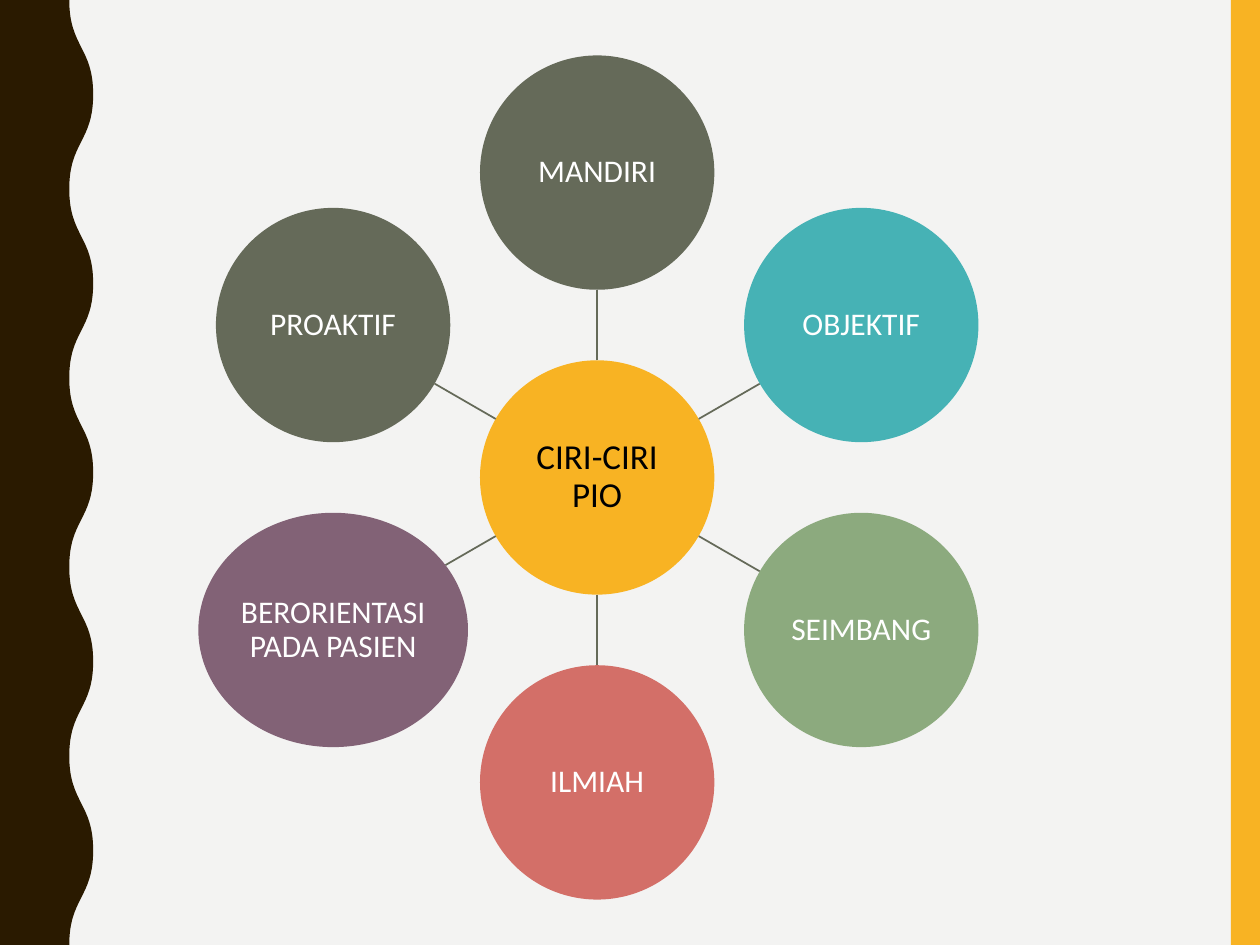
from math import cos, hypot, radians, sin

from lxml.etree import SubElement
from pptx import Presentation
from pptx.dml.color import RGBColor
from pptx.enum.shapes import MSO_CONNECTOR, MSO_SHAPE
from pptx.enum.text import MSO_ANCHOR, PP_ALIGN
from pptx.oxml.ns import qn
from pptx.util import Inches, Pt

# Content: text, fill, width; clockwise from the top
HUB = "CIRI-CIRI PIO"
NODES = [
    ("MANDIRI", "656A59", 1.86),
    ("OBJEKTIF", "46B2B5", 1.86),
    ("SEIMBANG", "8CAA7E", 1.86),
    ("ILMIAH", "D36F68", 1.86),
    ("BERORIENTASI PADA PASIEN", "826276", 2.14),
    ("PROAKTIF", "656A59", 1.86),
]
AMBER, BROWN, GREY = "F8B323", "2A1A00", "656A59"

# Layout in inches
WIDTH, HEIGHT = 10, 7.5
CX, CY, RING, DIAMETER = 4.74, 3.79, 2.42, 1.86
WAVE_EDGES, WAVE_COUNT = (0.55, 0.74), 10


def rgb(value):
    return RGBColor.from_string(value)


def paint(sp, color):
    sp.shadow.inherit = False
    sp.fill.solid()
    sp.fill.fore_color.rgb = rgb(color)
    sp.line.fill.background()


def add_circle(s, text, x, y, width, fill, size, color):
    sp = s.shapes.add_shape(
        MSO_SHAPE.OVAL, Inches(x - width / 2), Inches(y - DIAMETER / 2),
        Inches(width), Inches(DIAMETER))
    paint(sp, fill)
    tf = sp.text_frame
    tf.word_wrap = True
    tf.vertical_anchor = MSO_ANCHOR.MIDDLE
    tf.margin_left = tf.margin_right = Inches(0.01)
    tf.margin_top = tf.margin_bottom = Inches(0.01)
    p = tf.paragraphs[0]
    p.text = text
    p.alignment = PP_ALIGN.CENTER
    p.line_spacing = 0.9
    p.font.name = "Calibri"
    p.font.size = Pt(size)
    p.font.color.rgb = rgb(color)


def add_spoke(s, dx, dy, node_width):
    """Line from the hub's edge to the node's edge, along direction (dx, dy)."""
    start = DIAMETER / 2
    end = RING - 1 / hypot(dx / (node_width / 2), dy / (DIAMETER / 2))
    line = s.shapes.add_connector(
        MSO_CONNECTOR.STRAIGHT,
        Inches(CX + start * dx), Inches(CY + start * dy),
        Inches(CX + end * dx), Inches(CY + end * dy))
    line.line.color.rgb = rgb(GREY)
    line.line.width = Pt(1)
    SubElement(line._element.spPr, qn("a:effectLst"))


def add_wave(s):
    """Band whose right side swings between the two wave edges."""
    step = HEIGHT / WAVE_COUNT
    points = [(Inches(WAVE_EDGES[i % 2]), Inches(i * step))
              for i in range(WAVE_COUNT + 1)]
    fb = s.shapes.build_freeform(0, 0)
    fb.add_line_segments([*points, (0, Inches(HEIGHT))], close=True)
    sp = fb.convert_to_shape()
    paint(sp, BROWN)
    # Bend the wave's straight segments into S-curves
    segments = list(sp._element.iter(qn("a:lnTo")))[1:WAVE_COUNT + 1]
    for segment, (x0, y0), (x1, y1) in zip(segments, points, points[1:]):
        middle = (y0 + y1) // 2
        curve = segment.makeelement(qn("a:cubicBezTo"))
        for x, y in ((x0, middle), (x1, middle), (x1, y1)):
            SubElement(curve, qn("a:pt"), x=str(x), y=str(y))
        segment.getparent().replace(segment, curve)


prs = Presentation()
prs.slide_width, prs.slide_height = Inches(WIDTH), Inches(HEIGHT)
s = prs.slides.add_slide(prs.slide_layouts[6])
s.background.fill.solid()
s.background.fill.fore_color.rgb = rgb("F3F3F2")

# Side bands
bar = s.shapes.add_shape(
    MSO_SHAPE.RECTANGLE, Inches(9.77), 0, Inches(0.23), Inches(HEIGHT))
paint(bar, AMBER)
add_wave(s)

# Hub, spokes and nodes
add_circle(s, HUB, CX, CY, DIAMETER, AMBER, 20, "000000")
for i, (text, fill, width) in enumerate(NODES):
    angle = radians(360 / len(NODES) * i - 90)
    dx, dy = cos(angle), sin(angle)
    add_spoke(s, dx, dy, width)
    add_circle(s, text, CX + RING * dx, CY + RING * dy, width, fill, 18, "FFFFFF")

prs.save("out.pptx")
